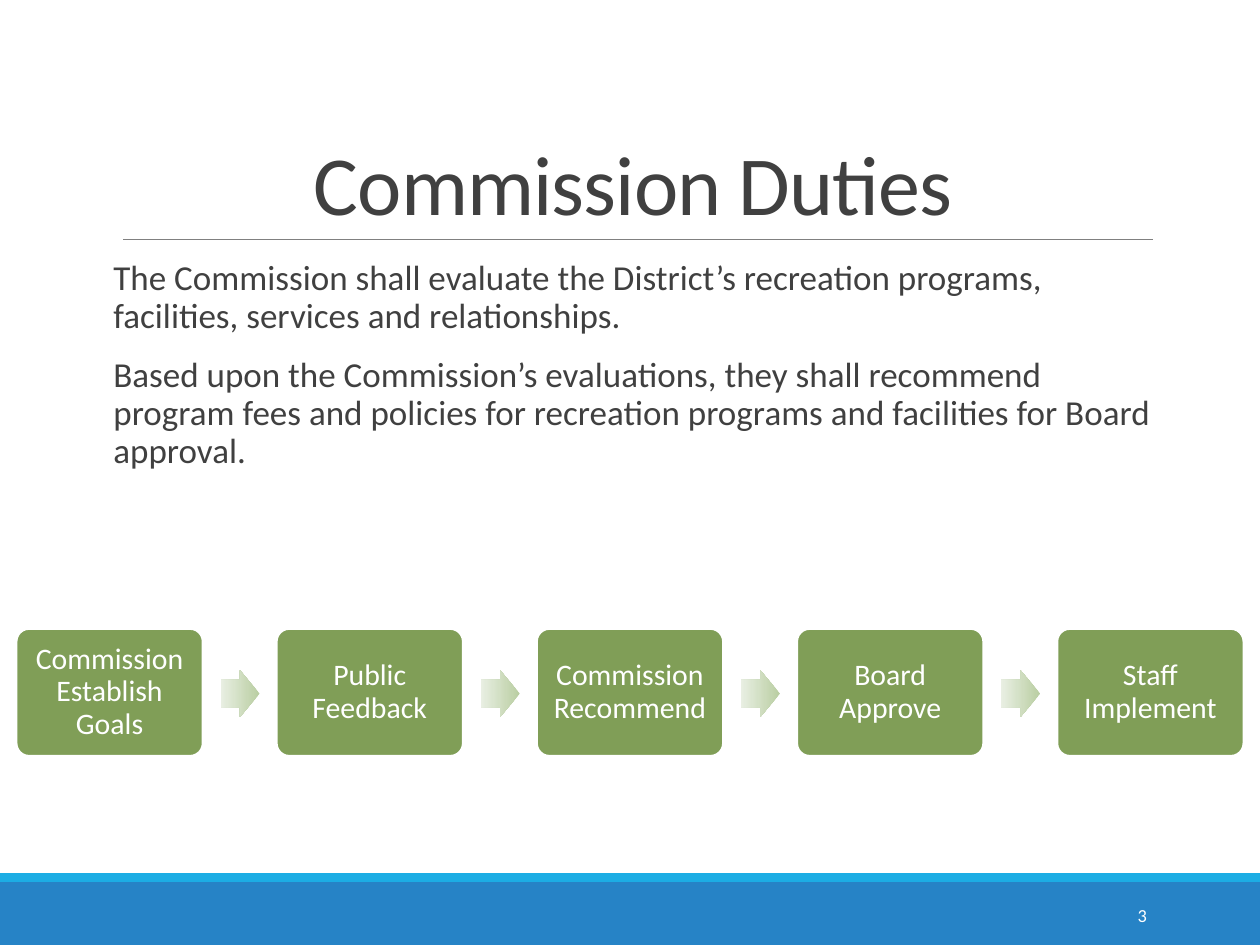
from dataclasses import dataclass

import pptx
import pptx.dml.color
import pptx.enum.shapes
import pptx.enum.text
import pptx.oxml
import pptx.shapes.autoshape
import pptx.slide
import pptx.text.text
import pptx.util
from pptx.dml.color import RGBColor
from pptx.util import Inches

DARK_TEXT = RGBColor(0x40, 0x40, 0x40)
WHITE = RGBColor(0xFF, 0xFF, 0xFF)
RULE_GRAY = RGBColor(0x80, 0x80, 0x80)
BAND_BLUE = RGBColor(0x26, 0x83, 0xC6)
STRIPE_BLUE = RGBColor(0x1C, 0xAD, 0xE4)
STEP_GREEN = RGBColor(0x80, 0x9E, 0x57)
ARROW_GREEN = RGBColor(0xB9, 0xCE, 0xA2)
ARROW_PALE = RGBColor(0xE9, 0xEF, 0xE3)

SHAPE = pptx.enum.shapes.MSO_SHAPE
ALIGN = pptx.enum.text.PP_ALIGN
ANCHOR = pptx.enum.text.MSO_ANCHOR

DUTIES = (
    "The Commission shall evaluate the District’s recreation programs, "
    "facilities, services and relationships.",
    "Based upon the Commission’s evaluations, they shall recommend program fees "
    "and policies for recreation programs and facilities for Board approval.",
)
STEPS = (
    "Commission Establish Goals",
    "Public Feedback",
    "Commission Recommend",
    "Board Approve",
    "Staff Implement",
)
FIRST_STEP_LEFT = 0.13
STEP_PITCH = 2.065
ARROW_OFFSET = 1.62


@dataclass(frozen=True)
class Box:
    """Position and size in inches."""
    left: float
    top: float
    width: float
    height: float

    def lengths(self) -> tuple:
        return tuple(Inches(v) for v in (self.left, self.top, self.width, self.height))


def style_paragraph(paragraph: pptx.text.text._Paragraph, size: float, color: RGBColor,
                    align: ALIGN, spacing: float = 1.0, after: float = 0) -> None:
    paragraph.alignment = align
    paragraph.line_spacing = spacing
    paragraph.space_before = pptx.util.Pt(0)
    paragraph.space_after = pptx.util.Pt(after)
    for run in paragraph.runs:
        run.font.name = "Calibri"
        run.font.size = pptx.util.Pt(size)
        run.font.color.rgb = color


def set_insets(frame: pptx.text.text.TextFrame, side: float, end: float) -> None:
    frame.margin_left = frame.margin_right = Inches(side)
    frame.margin_top = frame.margin_bottom = Inches(end)


def add_plain_shape(slide: pptx.slide.Slide, kind: SHAPE,
                    box: Box) -> pptx.shapes.autoshape.Shape:
    shape = slide.shapes.add_shape(kind, *box.lengths())
    shape.shadow.inherit = False
    shape.line.fill.background()
    return shape


def add_band(slide: pptx.slide.Slide, box: Box, color: RGBColor) -> None:
    band = add_plain_shape(slide, SHAPE.RECTANGLE, box)
    band.fill.solid()
    band.fill.fore_color.rgb = color


def add_step(slide: pptx.slide.Slide, left: float, label: str) -> None:
    step = add_plain_shape(slide, SHAPE.ROUNDED_RECTANGLE, Box(left, 4.99, 1.48, 1.01))
    step.adjustments[0] = 0.1
    step.fill.solid()
    step.fill.fore_color.rgb = STEP_GREEN
    step.line.color.rgb = WHITE
    step.line.width = pptx.util.Pt(1.25)
    frame = step.text_frame
    frame.word_wrap = True
    frame.vertical_anchor = ANCHOR.MIDDLE
    set_insets(frame, 0.07, 0.07)
    frame.text = label
    style_paragraph(frame.paragraphs[0], 17, WHITE, ALIGN.CENTER, 0.9)


def add_arrow(slide: pptx.slide.Slide, left: float) -> None:
    arrow = add_plain_shape(slide, SHAPE.RIGHT_ARROW, Box(left, 5.32, 0.31, 0.37))
    arrow.adjustments[0] = 0.6
    arrow.adjustments[1] = 0.5
    arrow.fill.gradient()
    arrow.fill.gradient_angle = 180
    for stop, color in zip(arrow.fill.gradient_stops, (ARROW_GREEN, ARROW_PALE)):
        stop.color.rgb = color


def main() -> None:
    deck = pptx.Presentation()
    deck.slide_width, deck.slide_height = Inches(10), Inches(7.5)
    slide = deck.slides.add_slide(deck.slide_layouts.get_by_name("Title Only"))

    # Footer bands and the rule under the title
    add_band(slide, Box(0, 7, 10, 0.5), BAND_BLUE)
    add_band(slide, Box(0, 6.93, 10, 0.07), STRIPE_BLUE)
    rule = slide.shapes.add_connector(
        pptx.enum.shapes.MSO_CONNECTOR.STRAIGHT,
        Inches(0.98), Inches(1.9), Inches(9.15), Inches(1.9))
    rule.line.color.rgb = RULE_GRAY
    rule.line.width = pptx.util.Pt(0.5)
    rule._element.spPr.append(pptx.oxml.parse_xml(
        '<a:effectLst xmlns:a="http://schemas.openxmlformats.org/drawingml/2006/main"/>'))

    # Title
    title = slide.shapes.title
    title.left, title.top, title.width, title.height = Box(0.9, 0.31, 8.25, 1.59).lengths()
    heading = title.text_frame
    heading.text = "Commission Duties"
    heading.auto_size = pptx.enum.text.MSO_AUTO_SIZE.NONE
    heading.vertical_anchor = ANCHOR.BOTTOM
    style_paragraph(heading.paragraphs[0], 48, DARK_TEXT, ALIGN.CENTER, 0.85)
    heading.paragraphs[0].runs[0].font._element.set("spc", "-50")

    # Duties
    duties = slide.shapes.add_textbox(*Box(0.9, 2.02, 8.25, 2.8).lengths()).text_frame
    duties.word_wrap = True
    set_insets(duties, 0, 0.05)
    duties.text = "\n".join(DUTIES)
    for paragraph in duties.paragraphs:
        style_paragraph(paragraph, 20, DARK_TEXT, ALIGN.LEFT, 0.9, 12)

    # Slide number
    number = slide.shapes.add_textbox(*Box(8.12, 7.06, 1.08, 0.4).lengths()).text_frame
    number.word_wrap = True
    number.vertical_anchor = ANCHOR.MIDDLE
    number.text = "3"
    style_paragraph(number.paragraphs[0], 10.5, WHITE, ALIGN.RIGHT)

    # Process: steps with an arrow between neighbours
    for index, label in enumerate(STEPS):
        left = FIRST_STEP_LEFT + index * STEP_PITCH
        add_step(slide, left, label)
        if index < len(STEPS) - 1:
            add_arrow(slide, left + ARROW_OFFSET)

    deck.save("out.pptx")


if __name__ == "__main__":
    main()
